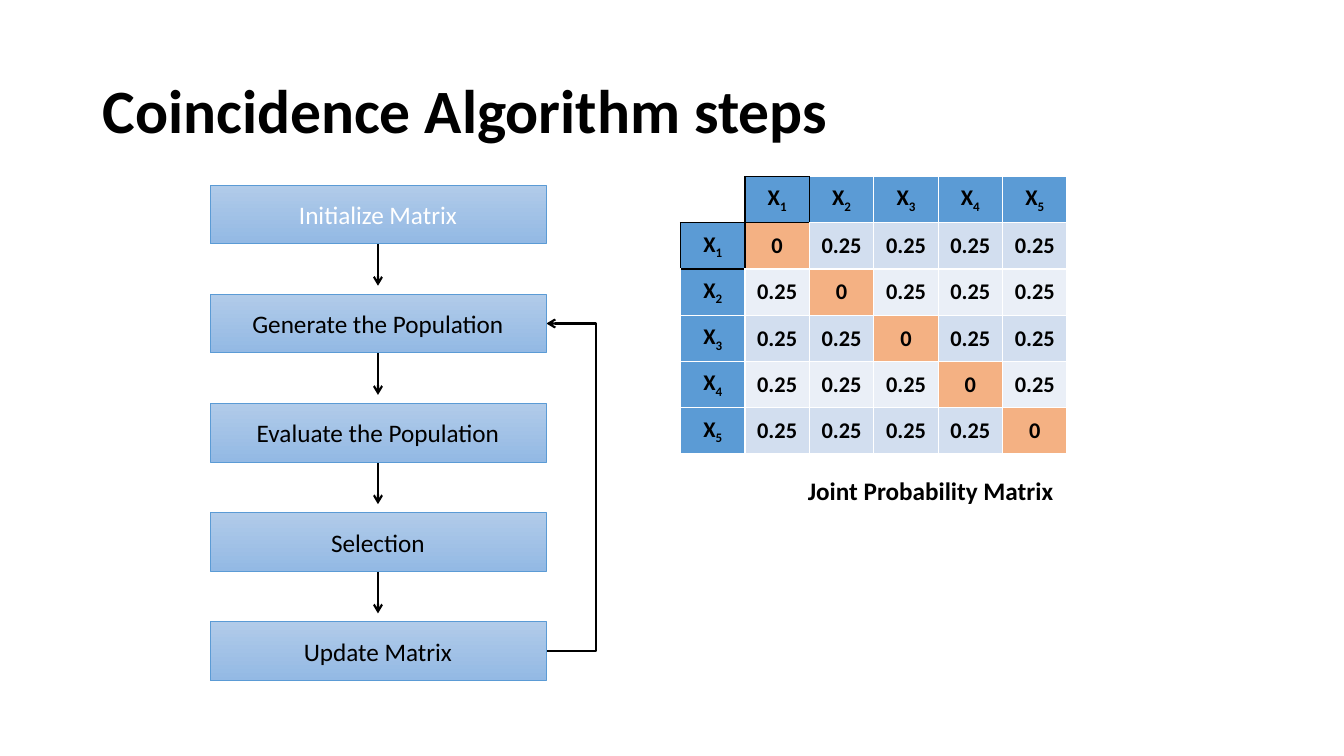
from lxml import etree
from pptx import Presentation
from pptx.dml.color import RGBColor
from pptx.enum.shapes import MSO_CONNECTOR, MSO_SHAPE
from pptx.enum.text import MSO_ANCHOR, MSO_AUTO_SIZE, PP_ALIGN
from pptx.oxml.ns import qn
from pptx.util import Cm, Pt

LEFT, CENTER = PP_ALIGN.LEFT, PP_ALIGN.CENTER
MIDDLE = MSO_ANCHOR.MIDDLE
NONE, GROW = MSO_AUTO_SIZE.NONE, MSO_AUTO_SIZE.SHAPE_TO_FIT_TEXT
STRAIGHT, ELBOW = MSO_CONNECTOR.STRAIGHT, MSO_CONNECTOR.ELBOW
RECT = MSO_SHAPE.RECTANGLE

BLACK = RGBColor(0x00, 0x00, 0x00)
WHITE = RGBColor(0xFF, 0xFF, 0xFF)
BLUE = RGBColor(0x5B, 0x9B, 0xD5)
LIGHT = RGBColor(0xB1, 0xCB, 0xE9)
DEEP = RGBColor(0x93, 0xB9, 0xE4)
ORANGE = RGBColor(0xF4, 0xB1, 0x83)
BANDS = (RGBColor(0xEA, 0xEF, 0xF7), RGBColor(0xD2, 0xDE, 0xEF))

STEPS = ("Initialize Matrix", "Generate the Population",
         "Evaluate the Population", "Selection", "Update Matrix")
SIDES = {"L": (0, -1), "R": (0, 1), "T": (-1, 0), "B": (1, 0)}
FRAMED = {(0, 1), (1, 0)}
COUNT = 5


def write(frame, text, size=18, color=BLACK, bold=False, align=LEFT, sub=""):
    para = frame.paragraphs[0]
    para.alignment = align
    for part, base in ((text, 0), (sub, -25000)):
        if part:
            run = para.add_run()
            run.text = part
            run.font.name = "Calibri"
            run.font.size = Pt(size)
            run.font.bold = bold
            run.font.color.rgb = color
            if base:
                run.font._element.set("baseline", str(base))
    return para


def add_arrow(slide, kind, start, end, bend=None):
    arrow = slide.shapes.add_connector(kind, *map(Cm, start + end))
    arrow.line.color.rgb = BLACK
    arrow.line.width = Pt(1.5)
    etree.SubElement(arrow.line._get_or_add_ln(), qn("a:tailEnd"), type="arrow")
    props = arrow._element.spPr
    etree.SubElement(props, qn("a:effectLst"))
    if bend:
        guides = props.find(qn("a:prstGeom")).find(qn("a:avLst"))
        etree.SubElement(guides, qn("a:gd"), name="adj1", fmla=f"val {bend}")


def add_title(slide, left, top, width, height):
    title = slide.shapes.title
    title.left, title.top = Cm(left), Cm(top)
    title.width, title.height = Cm(width), Cm(height)
    frame = title.text_frame
    frame.auto_size = NONE
    frame.vertical_anchor = MIDDLE
    para = write(frame, "Coincidence Algorithm steps", size=44, bold=True)
    para.line_spacing = 0.9


def add_step(slide, text, color, left, top, width, height):
    box = slide.shapes.add_shape(RECT, Cm(left), Cm(top), Cm(width), Cm(height))
    box.shadow.inherit = False
    box.fill.gradient()
    box.fill.gradient_angle = 270
    for stop, shade in zip(box.fill.gradient_stops, (LIGHT, DEEP)):
        stop.color.rgb = shade
    box.line.color.rgb = BLUE
    box.line.width = Pt(0.5)
    box.text_frame.vertical_anchor = MIDDLE
    write(box.text_frame, text, color=color, align=CENTER)


def add_flow(slide, left, top, width, height):
    tall = 1.48
    pitch = (height - tall) / (len(STEPS) - 1)
    tops = [top + i * pitch for i in range(len(STEPS))]
    mid, right = left + width / 2, left + width
    for y in tops[:-1]:
        add_arrow(slide, STRAIGHT, (mid, y + tall), (mid, y + 2.54))
    slim, reach = 0.01, 1.25
    add_arrow(slide, ELBOW, (right, tops[-1] + tall / 2),
              (right + slim, tops[1] + tall / 2),
              bend=round(reach / slim * 100000))
    for i, (text, y) in enumerate(zip(STEPS, tops)):
        add_step(slide, text, BLACK if i else WHITE, left, y, width, tall)


def add_edges(cell, row, col):
    props = cell._tc.get_or_add_tcPr()
    for side, (down, over) in SIDES.items():
        framed = FRAMED & {(row, col), (row + down, col + over)}
        edge = etree.SubElement(props, qn(f"a:ln{side}"), w=str(Pt(1)))
        fill = etree.SubElement(edge, qn("a:solidFill"))
        etree.SubElement(fill, qn("a:srgbClr"),
                         val=str(BLACK if framed else WHITE))


def add_matrix(slide, left, top, width, height):
    size = COUNT + 1
    table = slide.shapes.add_table(size, size, Cm(left), Cm(top),
                                   Cm(width), Cm(height)).table
    table.first_row = table.horz_banding = False
    for row in range(size):
        for col in range(size):
            cell = table.cell(row, col)
            cell.vertical_anchor = MIDDLE
            add_edges(cell, row, col)
            if row == col == 0:
                cell.fill.background()
                continue
            cell.fill.solid()
            if row == 0 or col == 0:
                shade, text, sub = BLUE, "X", str(row + col)
            elif row == col:
                shade, text, sub = ORANGE, "0", ""
            else:
                shade, text, sub = BANDS[row % 2], "0.25", ""
            cell.fill.fore_color.rgb = shade
            write(cell.text_frame, text, size=16, bold=True,
                  align=CENTER, sub=sub)


def add_label(slide, left, top, width, height):
    box = slide.shapes.add_textbox(Cm(left), Cm(top), Cm(width), Cm(height))
    box.text_frame.word_wrap = False
    box.text_frame.auto_size = GROW
    write(box.text_frame, "Joint Probability Matrix", bold=True)


def main():
    deck = Presentation()
    deck.slide_width, deck.slide_height = Cm(33.87), Cm(19.05)
    slide = deck.slides.add_slide(deck.slide_layouts[5])
    add_title(slide, 2.33, 1.01, 29.21, 3.68)
    add_flow(slide, 5.29, 4.66, 8.47, 12.49)
    add_matrix(slide, 17.15, 4.45, 9.74, 6.99)
    add_label(slide, 20.11, 11.85, 6.76, 1.03)
    deck.save("out.pptx")


if __name__ == "__main__":
    main()
